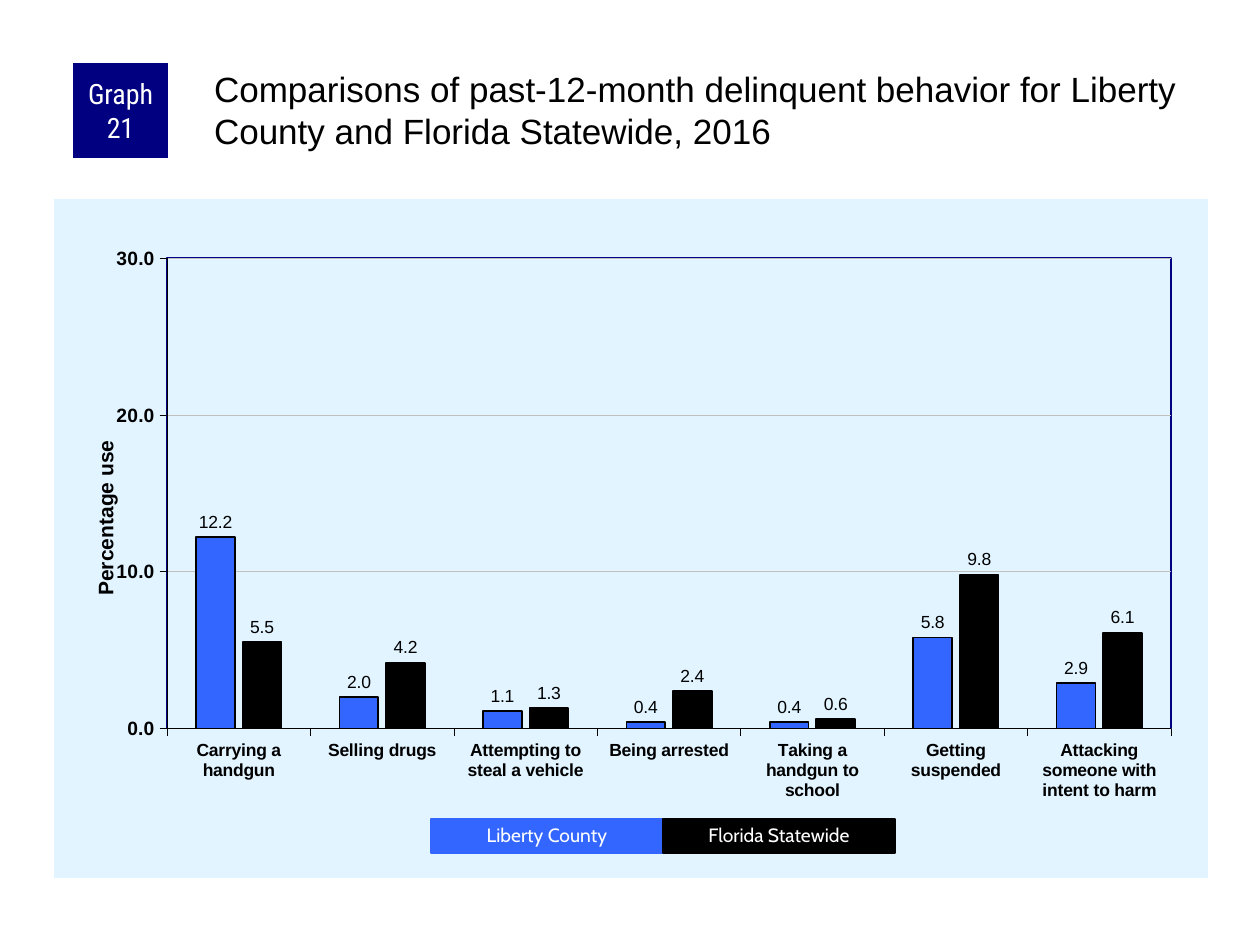
"""Build the delinquent behavior comparison slide."""
from dataclasses import dataclass
from typing import Any, Optional

import pptx
import pptx.chart.data
import pptx.dml.color
import pptx.enum.chart
import pptx.enum.shapes
import pptx.enum.text
import pptx.oxml
import pptx.oxml.ns
import pptx.util

EMU_PER_PX = 914400 / 126
NAMESPACES = pptx.oxml.ns.nsdecls("c", "a")
qn = pptx.oxml.ns.qn


@dataclass(frozen=True)
class Theme:
    navy: str = "000080"
    blue: str = "3366FF"
    black: str = "000000"
    white: str = "FFFFFF"
    panel: str = "E1F4FF"
    grid: str = "C0C0C0"
    body_font: str = "Arial"
    badge_font: str = "Roboto Condensed"
    key_font: str = "Cabin"
    title_size: int = 20
    badge_size: int = 16
    axis_title_size: int = 12
    value_size: int = 11
    key_size: int = 11
    label_size: int = 10


THEME = Theme()


@dataclass(frozen=True)
class Box:
    x: int
    y: int
    w: int
    h: int

    def emu(self) -> list[pptx.util.Emu]:
        return [px(n) for n in (self.x, self.y, self.w, self.h)]


@dataclass(frozen=True)
class Label:
    text: str
    box: Box
    fill: str
    font: str
    size: int
    margins: tuple[int, int]
    line: Optional[str] = None
    spacing: float = 1.0


@dataclass(frozen=True)
class Series:
    name: str
    values: tuple[float, ...]
    color: str


CATEGORIES = ("Carrying a handgun", "Selling drugs", "Attempting to steal a vehicle",
              "Being arrested", "Taking a handgun to school", "Getting suspended",
              "Attacking someone with intent to harm")
SERIES = (
    Series("Liberty County", (12.2, 2.0, 1.1, 0.4, 0.4, 5.8, 2.9), THEME.blue),
    Series("Florida Statewide", (5.5, 4.2, 1.3, 2.4, 0.6, 9.8, 6.1), THEME.black),
)
TITLE = ("Comparisons of past-12-month delinquent behavior for Liberty County "
         "and Florida Statewide, 2016")
KEY = Box(431, 819, 232, 34)


def px(n: int) -> pptx.util.Emu:
    return pptx.util.Emu(round(n * EMU_PER_PX))


def rgb(color: str) -> pptx.dml.color.RGBColor:
    return pptx.dml.color.RGBColor.from_string(color)


def apply(obj: Any, values: dict[str, Any]) -> None:
    for name, value in values.items():
        setattr(obj, name, value)


def style_font(font: Any, name: str, size: int, color: str, bold: bool = False) -> None:
    apply(font, {"name": name, "size": pptx.util.Pt(size), "bold": bold})
    font.color.rgb = rgb(color)


def style_line(line: Any, color: str, width: float) -> None:
    line.color.rgb = rgb(color)
    line.width = pptx.util.Pt(width)


def add_title(slide: Any, text: str, box: Box) -> None:
    sp = slide.shapes.title
    apply(sp, dict(zip(("left", "top", "width", "height"), box.emu())))
    tf = sp.text_frame
    tf.text = text
    apply(tf, {"word_wrap": True, "auto_size": pptx.enum.text.MSO_AUTO_SIZE.NONE,
               "vertical_anchor": pptx.enum.text.MSO_ANCHOR.TOP,
               "margin_left": px(4), "margin_top": px(4),
               "margin_right": 0, "margin_bottom": 0})
    p = tf.paragraphs[0]
    apply(p, {"alignment": pptx.enum.text.PP_ALIGN.LEFT, "line_spacing": 1.0,
              "space_before": pptx.util.Pt(0)})
    style_font(p.runs[0].font, THEME.body_font, THEME.title_size, THEME.black)


def add_label(slide: Any, label: Label) -> None:
    sp = slide.shapes.add_shape(pptx.enum.shapes.MSO_SHAPE.RECTANGLE, *label.box.emu())
    sp.shadow.inherit = False
    sp.fill.solid()
    sp.fill.fore_color.rgb = rgb(label.fill)
    if label.line:
        style_line(sp.line, label.line, 0.75)
    else:
        sp.line.fill.background()
    tf = sp.text_frame
    tf.text = label.text
    side, end = (px(n) for n in label.margins)
    apply(tf, {"word_wrap": True, "vertical_anchor": pptx.enum.text.MSO_ANCHOR.MIDDLE,
               "margin_left": side, "margin_right": side,
               "margin_top": end, "margin_bottom": end})
    p = tf.paragraphs[0]
    apply(p, {"alignment": pptx.enum.text.PP_ALIGN.CENTER, "line_spacing": label.spacing})
    style_font(p.runs[0].font, label.font, label.size, THEME.white)


def layout_xml(target: str, **places: float) -> Any:
    modes = "".join(f'<c:{k}Mode val="edge"/>' for k in ("x", "y"))
    values = "".join(f'<c:{k} val="{v}"/>' for k, v in places.items())
    return pptx.oxml.parse_xml(f"<c:layout {NAMESPACES}><c:manualLayout>{target}{modes}{values}"
                               "</c:manualLayout></c:layout>")


def area_xml(content: str) -> Any:
    return pptx.oxml.parse_xml(f"<c:spPr {NAMESPACES}>{content}</c:spPr>")


def solid_xml(color: str) -> str:
    return f'<a:solidFill><a:srgbClr val="{color}"/></a:solidFill>'


def remove_layout(parent: Any) -> None:
    for layout in parent.findall(qn("c:layout")):
        parent.remove(layout)


def style_axes(chart: Any) -> None:
    outside = pptx.enum.chart.XL_TICK_MARK.OUTSIDE
    for axis, size in ((chart.category_axis, THEME.label_size), (chart.value_axis, THEME.value_size)):
        axis.major_tick_mark = outside
        style_line(axis.format.line, THEME.black, 0.25)
        style_font(axis.tick_labels.font, THEME.body_font, size, THEME.black, True)
    axis = chart.value_axis
    apply(axis, {"minimum_scale": 0, "maximum_scale": 30, "major_unit": 10})
    style_line(axis.major_gridlines.format.line, THEME.grid, 0.25)
    title = axis.axis_title
    tf = title.text_frame
    tf.text = "Percentage use"
    style_font(tf.paragraphs[0].runs[0].font, THEME.body_font, THEME.axis_title_size, THEME.black, True)
    tf._txBody.bodyPr.set("rot", "-5400000")
    remove_layout(title._element)
    title._element.find(qn("c:tx")).addnext(layout_xml("", x=0.03, y=0.35))


def add_behavior_chart(slide: Any, box: Box) -> None:
    data = pptx.chart.data.CategoryChartData(number_format="0.0")
    data.categories = CATEGORIES
    for s in SERIES:
        data.add_series(s.name, s.values)
    kind = pptx.enum.chart.XL_CHART_TYPE.COLUMN_CLUSTERED
    chart = slide.shapes.add_chart(kind, *box.emu(), data).chart
    apply(chart, {"has_legend": False, "has_title": False})
    style_font(chart.font, THEME.body_font, THEME.label_size, THEME.black)
    plot = chart.plots[0]
    apply(plot, {"gap_width": 150, "overlap": -20, "vary_by_categories": False})
    for s, bars in zip(SERIES, plot.series):
        bars.format.fill.solid()
        bars.format.fill.fore_color.rgb = rgb(s.color)
        style_line(bars.format.line, THEME.black, 1)
        apply(bars.data_labels, {"show_value": True, "number_format": "0.0",
                                 "number_format_is_linked": False,
                                 "position": pptx.enum.chart.XL_LABEL_POSITION.OUTSIDE_END})
        style_font(bars.data_labels.font, THEME.body_font, THEME.label_size, THEME.black)
    style_axes(chart)
    area = chart.element.find(qn("c:chart")).find(qn("c:plotArea"))
    remove_layout(area)
    area.insert(0, layout_xml('<c:layoutTarget val="inner"/>', x=0.098, y=0.087, w=0.87, h=0.693))
    area.append(area_xml(f'<a:noFill/><a:ln w="12700">{solid_xml(THEME.navy)}</a:ln>'))
    chart.element.find(qn("c:chart")).addnext(
        area_xml(f"{solid_xml(THEME.panel)}<a:ln><a:noFill/></a:ln>"))


def main() -> None:
    prs = pptx.Presentation()
    apply(prs, {"slide_width": px(1260), "slide_height": px(945)})
    slide = prs.slides.add_slide(prs.slide_layouts[5])
    add_behavior_chart(slide, Box(54, 199, 1154, 679))
    add_label(slide, Label("Graph 21", Box(73, 63, 95, 95), THEME.navy,
                           THEME.badge_font, THEME.badge_size, (6, 0)))
    add_title(slide, TITLE, Box(210, 63, 998, 105))
    for i, s in enumerate(SERIES):
        box = Box(KEY.x + i * KEY.w, KEY.y, KEY.w, KEY.h)
        add_label(slide, Label(s.name, box, s.color, THEME.key_font, THEME.key_size,
                               (13, 6), s.color, 0.9))
    prs.save("out.pptx")


if __name__ == "__main__":
    main()
